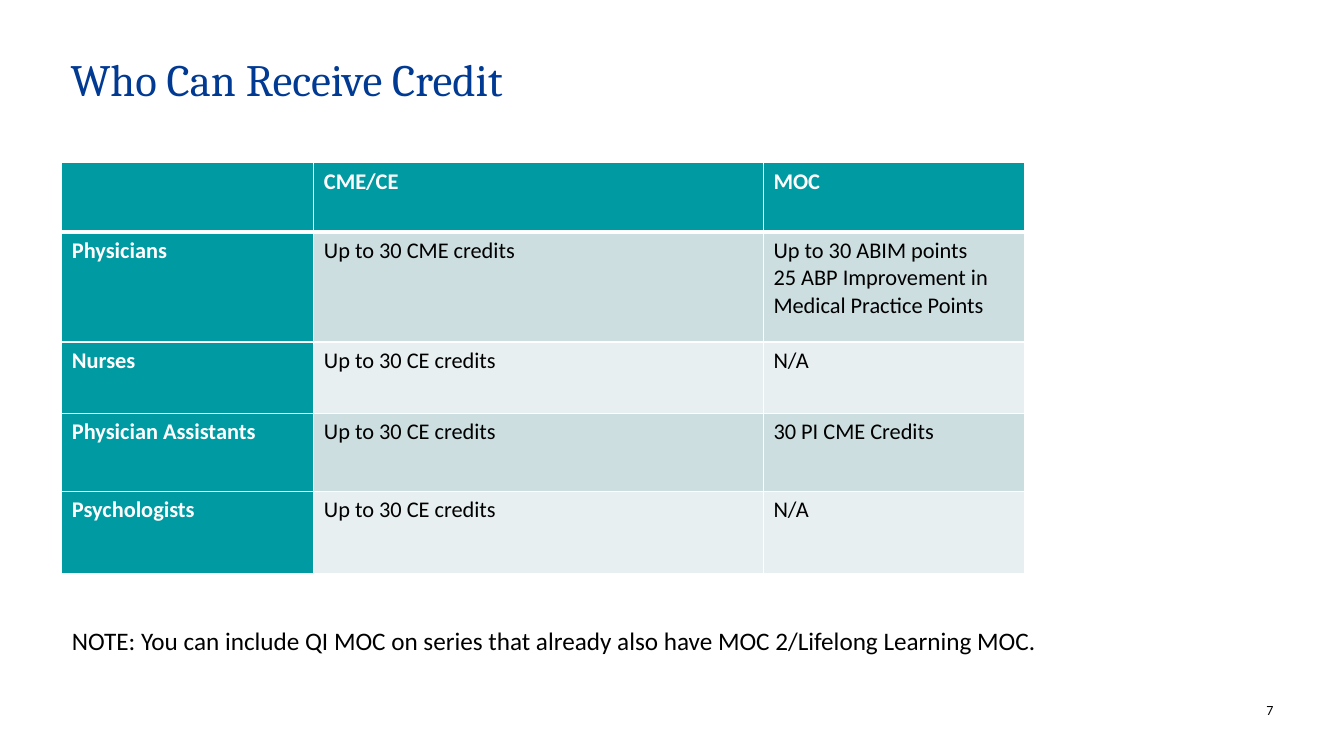
from lxml import etree
from pptx import Presentation
from pptx.dml.color import RGBColor
from pptx.enum.text import MSO_ANCHOR, MSO_AUTO_SIZE, PP_ALIGN
from pptx.oxml.ns import qn
from pptx.util import Cm, Pt

LEFT, RIGHT = PP_ALIGN.LEFT, PP_ALIGN.RIGHT
TOP = MSO_ANCHOR.TOP
NO_FIT = MSO_AUTO_SIZE.NONE

BLACK, WHITE = "000000", "FFFFFF"
BLUE, TEAL = "003A93", "009AA3"
BANDS = ["CCDEE0", "E7EFF0"]

COLUMN_WIDTHS = [6.35, 11.33, 6.58]
ROW_HEIGHTS = [1.75, 2.77, 1.8, 1.96, 2.08]
CREDITS = [
    ["", "CME/CE", "MOC"],
    ["Physicians", "Up to 30 CME credits",
     "Up to 30 ABIM points\n25 ABP Improvement in Medical Practice Points"],
    ["Nurses", "Up to 30 CE credits", "N/A"],
    ["Physician Assistants", "Up to 30 CE credits", "30 PI CME Credits"],
    ["Psychologists", "Up to 30 CE credits", "N/A"],
]


def rgb(value):
    return RGBColor.from_string(value)


def write(p, text, size, color=BLACK, font="Calibri", bold=False):
    for i, line in enumerate(text.split("\n")):
        if i:
            p.add_line_break()
        r = p.add_run()
        r.text = line
        r.font.size = Pt(size)
        r.font.name = font
        r.font.bold = bold
        r.font.color.rgb = rgb(color)


def set_frame(tf, wrap, inset=None):
    tf.word_wrap = wrap
    tf.auto_size = NO_FIT
    tf.vertical_anchor = TOP
    if inset is not None:
        tf.margin_left = tf.margin_right = inset
        tf.margin_top = tf.margin_bottom = inset


def add_title(s, text):
    title = s.shapes.title
    title.left, title.top = Cm(1.78), Cm(1.45)
    title.width, title.height = Cm(30.28), Cm(2.67)
    set_frame(title.text_frame, True, Cm(0))
    p = title.text_frame.paragraphs[0]
    p.alignment = LEFT
    p.line_spacing = 0.9
    write(p, text, 32, BLUE, "Cambria")


def add_text(s, box, text, size, align=LEFT, wrap=False, inset=None):
    sp = s.shapes.add_textbox(*[Cm(v) for v in box])
    set_frame(sp.text_frame, wrap, inset)
    p = sp.text_frame.paragraphs[0]
    p.alignment = align
    write(p, text, size)


def add_border(cell, side, points):
    tc_pr = cell._tc.get_or_add_tcPr()
    ln = etree.SubElement(tc_pr, qn(f"a:ln{side}"), w=str(Pt(points)))
    fill = etree.SubElement(ln, qn("a:solidFill"))
    etree.SubElement(fill, qn("a:srgbClr"), val=WHITE)


def format_cell(cell, row, col, text):
    heading = row == 0 or col == 0
    thick_sides = {0: "B", 1: "T"}
    for side in "LRTB":
        add_border(cell, side, 3 if thick_sides.get(row) == side else 1)
    cell.fill.solid()
    cell.fill.fore_color.rgb = rgb(TEAL if heading else BANDS[(row - 1) % 2])
    if text:
        write(cell.text_frame.paragraphs[0], text, 16,
              WHITE if heading else BLACK, bold=heading)


def add_credit_table(s):
    table = s.shapes.add_table(
        len(ROW_HEIGHTS), len(COLUMN_WIDTHS), Cm(1.56), Cm(4.1),
        Cm(sum(COLUMN_WIDTHS)), Cm(sum(ROW_HEIGHTS))).table
    for column, width in zip(table.columns, COLUMN_WIDTHS):
        column.width = Cm(width)
    for row, height in zip(table.rows, ROW_HEIGHTS):
        row.height = Cm(height)
    for i, texts in enumerate(CREDITS):
        for j, text in enumerate(texts):
            format_cell(table.cell(i, j), i, j, text)


def main():
    prs = Presentation()
    prs.slide_width, prs.slide_height = Cm(33.87), Cm(19.05)
    s = prs.slides.add_slide(prs.slide_layouts[5])
    add_title(s, "Who Can Receive Credit")
    add_credit_table(s)
    add_text(s, (1.56, 15.62, 25.53, 1.03),
             "NOTE: You can include QI MOC on series that already also have "
             "MOC 2/Lifelong Learning MOC.", 18)
    add_text(s, (31.12, 17.68, 0.97, 0.43), "7", 10, RIGHT, True, Cm(0))
    prs.save("out.pptx")


if __name__ == "__main__":
    main()
